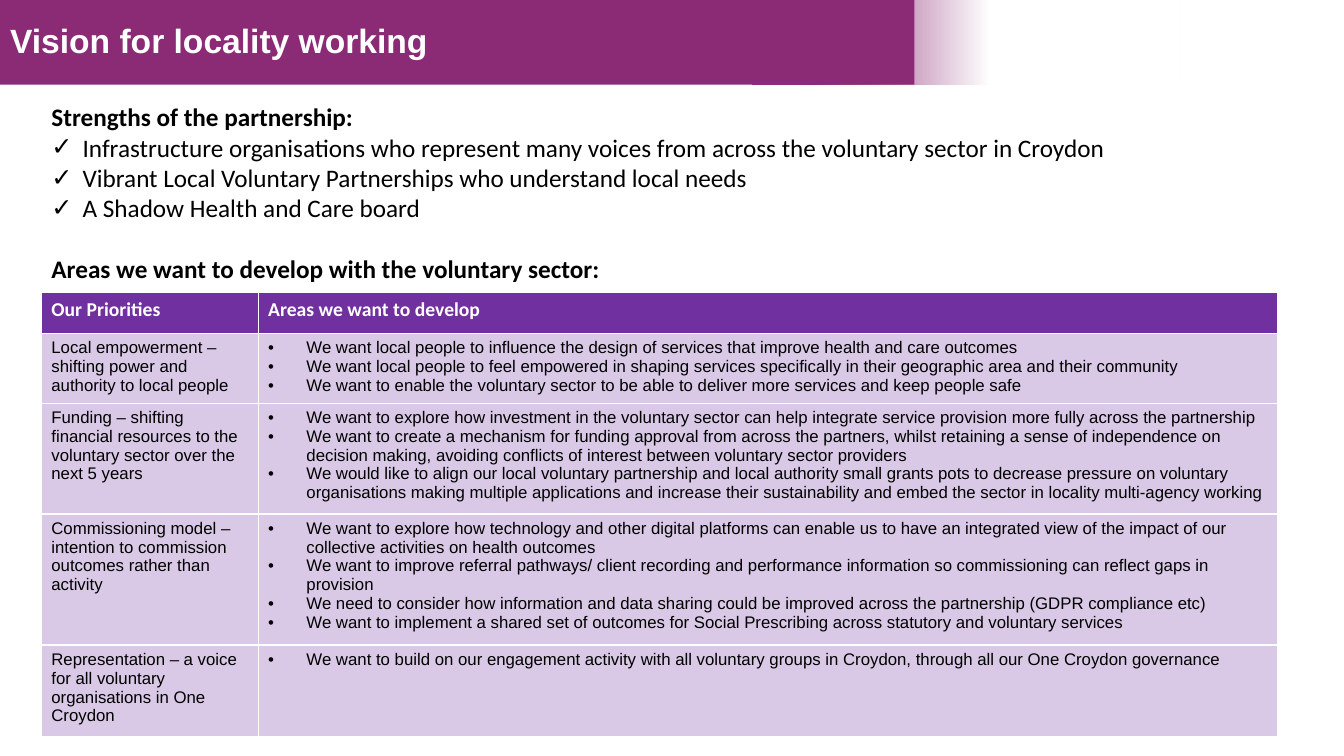
from lxml.etree import SubElement, fromstring
from pptx import Presentation
from pptx.dml.color import RGBColor
from pptx.enum.shapes import MSO_SHAPE
from pptx.enum.text import MSO_ANCHOR, MSO_AUTO_SIZE, PP_ALIGN
from pptx.oxml.ns import nsdecls, qn
from pptx.util import Inches, Pt

PLUM = RGBColor(0x8B, 0x2B, 0x75)
PURPLE = RGBColor(0x70, 0x30, 0xA0)
WHITE = RGBColor(0xFF, 0xFF, 0xFF)
BLACK = RGBColor(0, 0, 0)
FADE = [(0, "F7FAFD"), (22, "FAFBFD"), (44, "FFFFFF"), (87, PLUM), (100, PLUM)]

STRENGTHS = [
    "Infrastructure organisations who represent many voices from across the voluntary sector in Croydon",
    "Vibrant Local Voluntary Partnerships who understand local needs",
    "A Shadow Health and Care board",
]
HEADS = ["Our Priorities", "Areas we want to develop"]
ROWS = [
    (0.69, "Local empowerment – shifting power and authority to local people", [
        "We want local people to influence the design of services that improve health and care outcomes",
        "We want local people to feel empowered in shaping services specifically in their geographic area "
        "and their community",
        "We want to enable the voluntary sector to be able to deliver more services and keep people safe",
    ]),
    (1.1, "Funding – shifting financial resources to the voluntary sector over the next 5 years", [
        "We want to explore how investment in the voluntary sector can help integrate service provision "
        "more fully across the partnership",
        "We want to create a mechanism for funding approval from across the partners, whilst retaining a "
        "sense of independence on decision making, avoiding conflicts of interest between voluntary "
        "sector providers",
        "We would like to align our local voluntary partnership and local authority small grants pots to "
        "decrease pressure on voluntary organisations making multiple applications and increase their "
        "sustainability and embed the sector in locality multi-agency working",
    ]),
    (1.3, "Commissioning model – intention to commission outcomes rather than activity", [
        "We want to explore how technology and other digital platforms can enable us to have an "
        "integrated view of the impact of our collective activities on health outcomes",
        "We want to improve referral pathways/ client recording and performance information so "
        "commissioning can reflect gaps in provision",
        "We need to consider how information and data sharing could be improved across the partnership "
        "(GDPR compliance etc)",
        "We want to implement a shared set of outcomes for Social Prescribing across statutory and "
        "voluntary services",
    ]),
    (0.91, "Representation – a voice for all voluntary organisations in One Croydon", [
        "We want to build on our engagement activity with all voluntary groups in Croydon, through all "
        "our One Croydon governance",
    ]),
]


def place(shape, left, top, width, height):
    """Move a shape to a box given in inches."""
    shape.left, shape.top = Inches(left), Inches(top)
    shape.width, shape.height = Inches(width), Inches(height)


def write(para, text, size, face, color, bold=False, mark=None, indent=0, before=0):
    """Write one run in a paragraph, with a bullet if a mark is given."""
    props = para._p.get_or_add_pPr()
    props.set("marL", str(Inches(indent)))
    props.set("indent", str(-Inches(indent)))
    if mark:
        SubElement(props, qn("a:buFont"), typeface="Arial")
        SubElement(props, qn("a:buChar"), char=mark)
    else:
        SubElement(props, qn("a:buNone"))
    para.alignment = PP_ALIGN.LEFT
    para.space_before = Pt(before)
    run = para.add_run()
    run.text = text
    font = run.font
    font.size, font.name, font.bold = Pt(size), face, bold
    font.color.rgb = color


def add_para(frame, first):
    """Return the first paragraph of a frame or a new one."""
    return frame.paragraphs[0] if first else frame.add_paragraph()


def add_block(slide, left, top, width, height):
    """Add a plain white rectangle."""
    block = slide.shapes.add_shape(MSO_SHAPE.RECTANGLE, 0, 0, 0, 0)
    place(block, left, top, width, height)
    block.shadow.inherit = False
    block.fill.solid()
    block.fill.fore_color.rgb = WHITE
    block.line.fill.background()
    return block


def add_banner(slide, left, top, width, height):
    """Place the title band with a fade behind its right end."""
    fade = add_block(slide, left + 7.46, top, 4.23, height)
    stops = "".join(
        f'<a:gs pos="{pos * 1000}"><a:srgbClr val="{color}"/></a:gs>' for pos, color in FADE)
    grad = fromstring(
        f'<a:gradFill {nsdecls("a")} rotWithShape="1"><a:gsLst>{stops}</a:gsLst>'
        '<a:lin ang="10800000" scaled="0"/></a:gradFill>')
    solid = fade.element.spPr.find(qn("a:solidFill"))
    solid.getparent().replace(solid, grad)
    cover = add_block(slide, left + 9.85, top, 1.84, 1)
    title = slide.shapes.title
    for block in (fade, cover):
        title.element.addprevious(block.element)
    place(title, left, top, width, height)
    title.fill.solid()
    title.fill.fore_color.rgb = PLUM
    frame = title.text_frame
    frame.auto_size = MSO_AUTO_SIZE.NONE
    frame.vertical_anchor = MSO_ANCHOR.MIDDLE
    para = frame.paragraphs[0]
    write(para, "Vision for locality working", 24, "Arial", WHITE, True)
    para.line_spacing = 0.9


def add_intro(slide, left, top, width, height):
    """Fill the body placeholder with the strengths and the table heading."""
    body = slide.placeholders[1]
    place(body, left, top, width, height)
    frame = body.text_frame
    frame.word_wrap = True
    frame.auto_size = MSO_AUTO_SIZE.NONE
    frame.vertical_anchor = MSO_ANCHOR.TOP
    look = (18, "Calibri", BLACK)
    write(frame.paragraphs[0], "Strengths of the partnership:", *look, bold=True)
    for text in STRENGTHS:
        write(frame.add_paragraph(), text, *look, mark="✓", indent=0.31)
    write(frame.add_paragraph(), "Areas we want to develop with the voluntary sector:",
          *look, bold=True, before=22)


def fill_cell(cell, alpha=100):
    """Fill a cell with purple at the given opacity."""
    cell.fill.solid()
    cell.fill.fore_color.rgb = PURPLE
    if alpha < 100:
        color = cell._tc.tcPr.find(".//" + qn("a:srgbClr"))
        SubElement(color, qn("a:alpha"), val=str(alpha * 1000))


def add_grid(slide, left, top, width, height):
    """Add the table of priorities and areas to develop."""
    grid = slide.shapes.add_table(len(ROWS) + 1, 2, Inches(left), Inches(top),
                                  Inches(width), Inches(height)).table
    grid.columns[0].width = Inches(2.15)
    grid.columns[1].width = Inches(width - 2.15)
    grid.rows[0].height = Inches(0.41)
    for col, text in enumerate(HEADS):
        cell = grid.cell(0, col)
        fill_cell(cell)
        write(cell.text_frame.paragraphs[0], text, 14, "Calibri", WHITE, True)
    look = (12, "Arial", BLACK)
    for row, (tall, name, areas) in enumerate(ROWS, 1):
        grid.rows[row].height = Inches(tall)
        head, cell = grid.cell(row, 0), grid.cell(row, 1)
        fill_cell(head, 26)
        fill_cell(cell, 26)
        write(head.text_frame.paragraphs[0], name, *look)
        for num, text in enumerate(areas):
            write(add_para(cell.text_frame, num == 0), text, *look, mark="•", indent=0.38)


def main():
    """Build the slide and save it."""
    deck = Presentation()
    deck.slide_width, deck.slide_height = Inches(13.33), Inches(7.5)
    slide = deck.slides.add_slide(deck.slide_layouts[1])
    add_banner(slide, 0, 0, 9.07, 0.84)
    add_intro(slide, 0.41, 0.96, 11.28, 1.92)
    add_grid(slide, 0.41, 2.9, 12.26, 4.41)
    deck.save("out.pptx")


if __name__ == "__main__":
    main()
